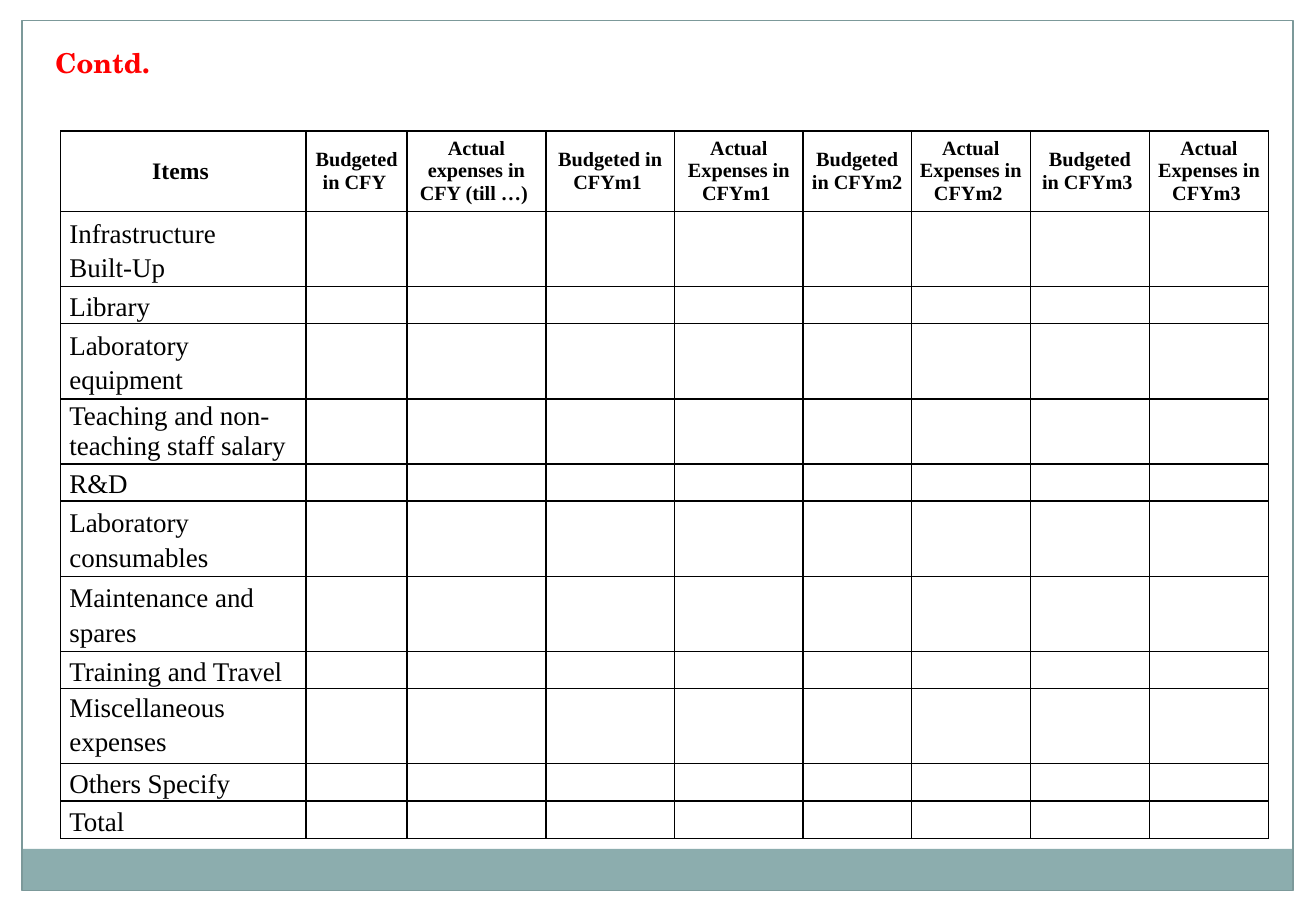
from typing import NamedTuple, Optional

from lxml import etree
from pptx import Presentation
from pptx.dml import color as col
from pptx.enum import shapes, text
from pptx.oxml import ns
from pptx.util import Cm, Pt

HUES = {"white": "FFFFFF", "band": "8CADAE", "frame": "7C999A",
        "black": "000000", "red": "FF0000"}
SERIF = "Times New Roman"
MID, TOP = text.MSO_ANCHOR.MIDDLE, text.MSO_ANCHOR.TOP


class Box(NamedTuple):
    left: float
    top: float
    width: float
    height: float
    fill: Optional[str] = None
    line: Optional[str] = None


class Item(NamedTuple):
    label: str
    height: float
    gap: float = 1.15
    anchor: text.MSO_ANCHOR = MID


ONE, TWO = 0.78, 1.57
BOXES = [
    Box(0, 0, 27.51, 0.43, "white"),
    Box(27.05, 0, 0.46, 19.05, "white"),
    Box(0, 0, 0.46, 19.05, "white"),
    Box(0.44, 17.75, 26.57, 0.86, "band"),
    Box(0.46, 0.43, 26.57, 18.19, line="frame"),
]
HEADS = ["Items ", "Budgeted in CFY ", "Actual expenses in CFY (till …) "] + [
    f"{kind} in CFYm{year} " for year in (1, 2, 3)
    for kind in ("Budgeted", "Actual Expenses")]
WIDTHS = [5.13, 2.11, 2.9, 2.69, 2.69, 2.26, 2.49, 2.49, 2.49]
ITEMS = [
    Item("Infrastructure\nBuilt-Up", TWO),
    Item("Library", ONE),
    Item("Laboratory equipment", TWO),
    Item("Teaching and non-teaching staff salary", 1.36, 1),
    Item("R&D", ONE),
    Item("Laboratory consumables", TWO),
    Item("Maintenance and spares", TWO),
    Item("Training and Travel", ONE),
    Item("Miscellaneous expenses", TWO, anchor=TOP),
    Item("Others Specify", ONE),
    Item("Total", ONE),
]


def hue(name: str) -> col.RGBColor:
    return col.RGBColor.from_string(HUES[name])


def write(frame, words: str, size: float, font: str = SERIF,
          tint: str = "black", bold: bool = False, gap: float = 1,
          align=text.PP_ALIGN.LEFT) -> None:
    """Write one paragraph per line of words."""
    frame.word_wrap = True
    for i, line in enumerate(words.split("\n")):
        para = frame.add_paragraph() if i else frame.paragraphs[0]
        para.alignment, para.line_spacing = align, float(gap)
        run = para.add_run()
        run.text = line
        run.font.size, run.font.name, run.font.bold = Pt(size), font, bold
        run.font.color.rgb = hue(tint)


def draw(slide, box: Box) -> None:
    shape = slide.shapes.add_shape(
        shapes.MSO_SHAPE.RECTANGLE, *(Cm(n) for n in box[:4]))
    shape.shadow.inherit = False
    if box.fill:
        shape.fill.solid()
        shape.fill.fore_color.rgb = hue(box.fill)
    else:
        shape.fill.background()
    if box.line:
        shape.line.color.rgb = hue(box.line)
        shape.line.width = Pt(0.75)
    else:
        shape.line.fill.background()


def style(cell, anchor) -> None:
    """Clear the fill, set insets and rule all four sides."""
    cell.fill.background()
    cell.margin_left = cell.margin_right = Cm(0.18)
    cell.margin_top = cell.margin_bottom = 0
    cell.vertical_anchor = anchor
    props = cell._tc.get_or_add_tcPr()
    for i, side in enumerate(("lnL", "lnR", "lnT", "lnB")):
        edge = etree.Element(ns.qn(f"a:{side}"), w=str(Pt(1)))
        fill = etree.SubElement(edge, ns.qn("a:solidFill"))
        etree.SubElement(fill, ns.qn("a:srgbClr"), val=HUES["black"])
        props.insert(i, edge)


def shrink(cell) -> None:
    """Keep an empty cell from stretching its row."""
    para = cell.text_frame.paragraphs[0]._p
    etree.SubElement(para, ns.qn("a:endParaRPr"), sz="1000")


def budget(slide) -> None:
    rows = [Item("", 1.68)] + ITEMS
    table = slide.shapes.add_table(
        len(rows), len(HEADS), Cm(1.27), Cm(2.74), Cm(sum(WIDTHS)),
        Cm(sum(row.height for row in rows))).table
    table.first_row = table.horz_banding = False
    for slot, width in zip(table.columns, WIDTHS):
        slot.width = Cm(width)
    for r, row in enumerate(rows):
        table.rows[r].height = Cm(row.height)
        for c, head in enumerate(HEADS):
            cell = table.cell(r, c)
            style(cell, row.anchor)
            if r == 0:
                write(cell.text_frame, head, 12 if c else 14, bold=True,
                      align=text.PP_ALIGN.CENTER)
            elif c == 0:
                write(cell.text_frame, row.label, 16, gap=row.gap)
            else:
                shrink(cell)


def main() -> None:
    deck = Presentation()
    deck.slide_width, deck.slide_height = Cm(27.51), Cm(19.05)
    slide = deck.slides.add_slide(deck.slide_layouts[6])
    for box in BOXES:
        draw(slide, box)
    budget(slide)
    title = slide.shapes.add_textbox(Cm(0.91), Cm(0.84), Cm(25.68), Cm(0.84))
    write(title.text_frame, "Contd.", 16.2, "TeX Gyre Schola", "red", True)
    deck.save("out.pptx")


if __name__ == "__main__":
    main()
